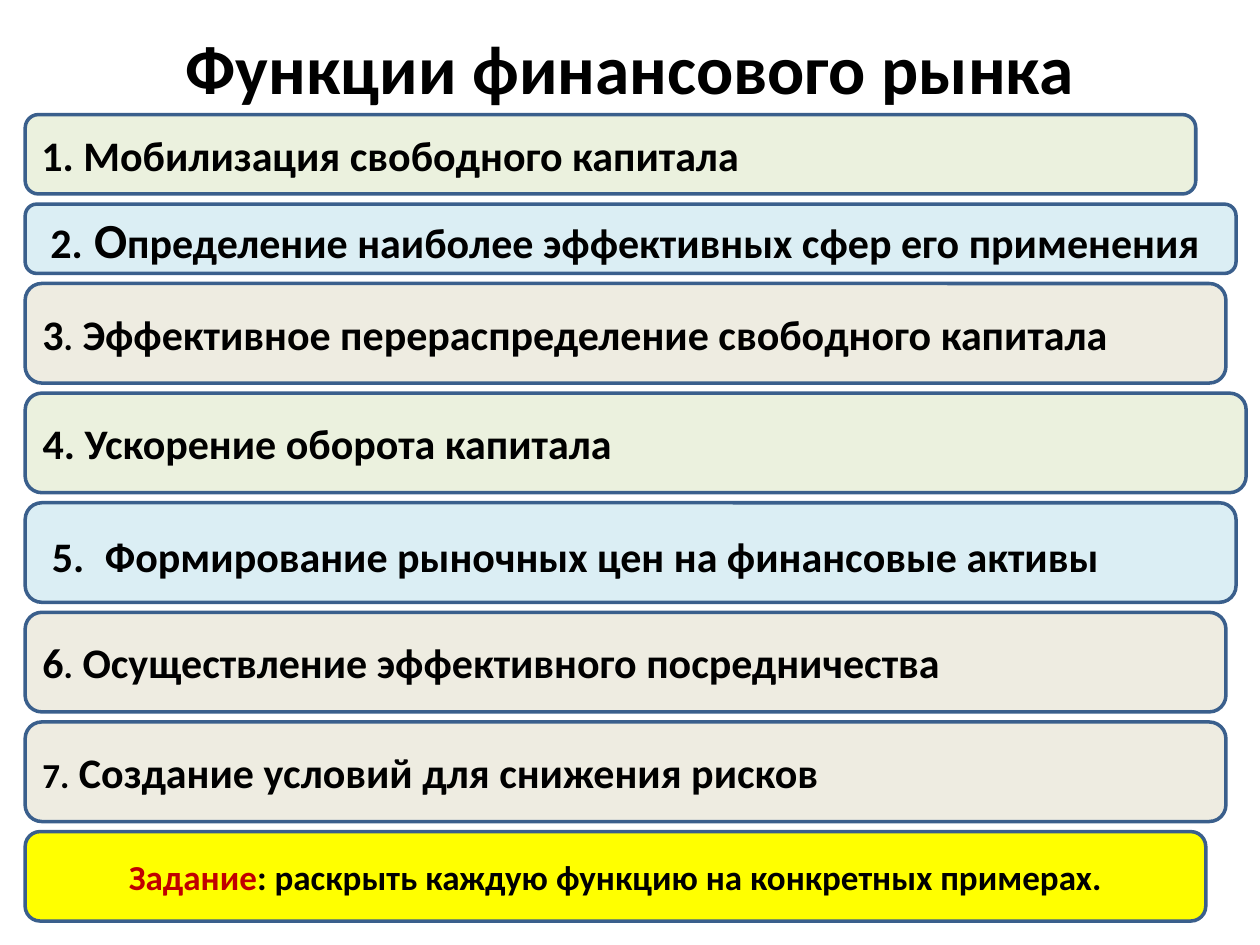
from pptx import Presentation
from pptx.dml.color import RGBColor
from pptx.enum.shapes import MSO_SHAPE
from pptx.enum.text import MSO_ANCHOR, MSO_AUTO_SIZE, PP_ALIGN
from pptx.oxml.ns import qn
from pptx.util import Inches, Pt
from lxml import etree

ROUNDED = MSO_SHAPE.ROUNDED_RECTANGLE
MIDDLE = MSO_ANCHOR.MIDDLE
NO_AUTOFIT = MSO_AUTO_SIZE.NONE
LEFT, CENTER = PP_ALIGN.LEFT, PP_ALIGN.CENTER

COLORS = {
    "text": "000000", "accent": "C00000", "border": "3A5F8C",
    "green": "EBF1DE", "blue": "DBEEF4", "beige": "EEECE1", "yellow": "FFFF00",
}
FONT = "Calibri"
BAR_LEFT, BAR_TOP, BAR_GAP = 0.2, 0.91, 0.08
BODY_BAR = 3

# Each bar: width, height, fill, alignment, spans of (text, size, colour)
BARS = [
    (9.29, 0.63, "green", LEFT, [("1. Мобилизация свободного капитала", 24, "text")]),
    (9.61, 0.55, "blue", LEFT, [
        (" 2.", 24, "text"), (" О", 28, "text"),
        ("пределение наиболее эффективных сфер его применения", 24, "text")]),
    (9.53, 0.79, "beige", LEFT, [
        ("3", 24, "text"), (".", 20, "text"),
        (" Эффективное перераспределение свободного капитала", 24, "text")]),
    (9.69, 0.79, "green", LEFT, [("4. Ускорение оборота капитала", 24, "text")]),
    (9.61, 0.79, "blue", LEFT, [
        (" 5.", 24, "text"), (" ", 28, "text"),
        (" Формирование рыночных цен на финансовые активы", 24, "text")]),
    (9.53, 0.79, "beige", LEFT, [
        ("6", 24, "text"), (".", 20, "text"),
        (" Осуществление эффективного посредничества", 24, "text")]),
    (9.53, 0.79, "beige", LEFT, [
        ("7.", 20, "text"), (" Создание условий для снижения рисков", 24, "text")]),
    (9.37, 0.71, "yellow", CENTER, [
        ("Задание", 20, "accent"),
        (": раскрыть каждую функцию на конкретных примерах.", 20, "text")]),
]


def color(name):
    """Return the named palette colour."""
    return RGBColor.from_string(COLORS[name])


def place(box, left, top, width, height):
    """Position and size a box in inches."""
    box.left, box.top = Inches(left), Inches(top)
    box.width, box.height = Inches(width), Inches(height)


def write_spans(box, spans, align):
    """Fill a box with one paragraph of bold spans."""
    frame = box.text_frame
    frame.word_wrap = True
    frame.auto_size = NO_AUTOFIT
    frame.vertical_anchor = MIDDLE
    para = frame.paragraphs[0]
    para.alignment = align
    for text, size, name in spans:
        span = para.add_run()
        span.text = text
        span.font.name = FONT
        span.font.size = Pt(size)
        span.font.bold = True
        span.font.color.rgb = color(name)


def round_body(box):
    """Give the body placeholder a rounded outline and no bullet."""
    geometry = etree.SubElement(box.element.spPr, qn("a:prstGeom"), prst="roundRect")
    etree.SubElement(geometry, qn("a:avLst"))
    properties = box.text_frame.paragraphs[0]._p.get_or_add_pPr()
    properties.set("marL", "0")
    properties.set("indent", "0")
    etree.SubElement(properties, qn("a:buNone"))


def add_bar(page, index, top):
    """Add one coloured bar, using the body placeholder for the main list item."""
    width, height, fill, align, spans = BARS[index]
    if index == BODY_BAR:
        box = page.placeholders[1]
        place(box, BAR_LEFT, top, width, height)
        round_body(box)
    else:
        box = page.shapes.add_shape(
            ROUNDED, Inches(BAR_LEFT), Inches(top), Inches(width), Inches(height))
        box.shadow.inherit = False
    box.fill.solid()
    box.fill.fore_color.rgb = color(fill)
    box.line.color.rgb = color("border")
    box.line.width = Pt(2)
    write_spans(box, spans, align)


def main():
    """Build the slide and save it."""
    deck = Presentation()
    deck.slide_width, deck.slide_height = Inches(10), Inches(7.5)
    page = deck.slides.add_slide(deck.slide_layouts[1])
    title = page.shapes.title
    place(title, 0.5, 0.3, 9, 0.46)
    write_spans(title, [("Функции финансового рынка", 39.6, "text")], CENTER)
    top = BAR_TOP
    for index, bar in enumerate(BARS):
        add_bar(page, index, top)
        top += bar[1] + BAR_GAP
    deck.save("out.pptx")


if __name__ == "__main__":
    main()
